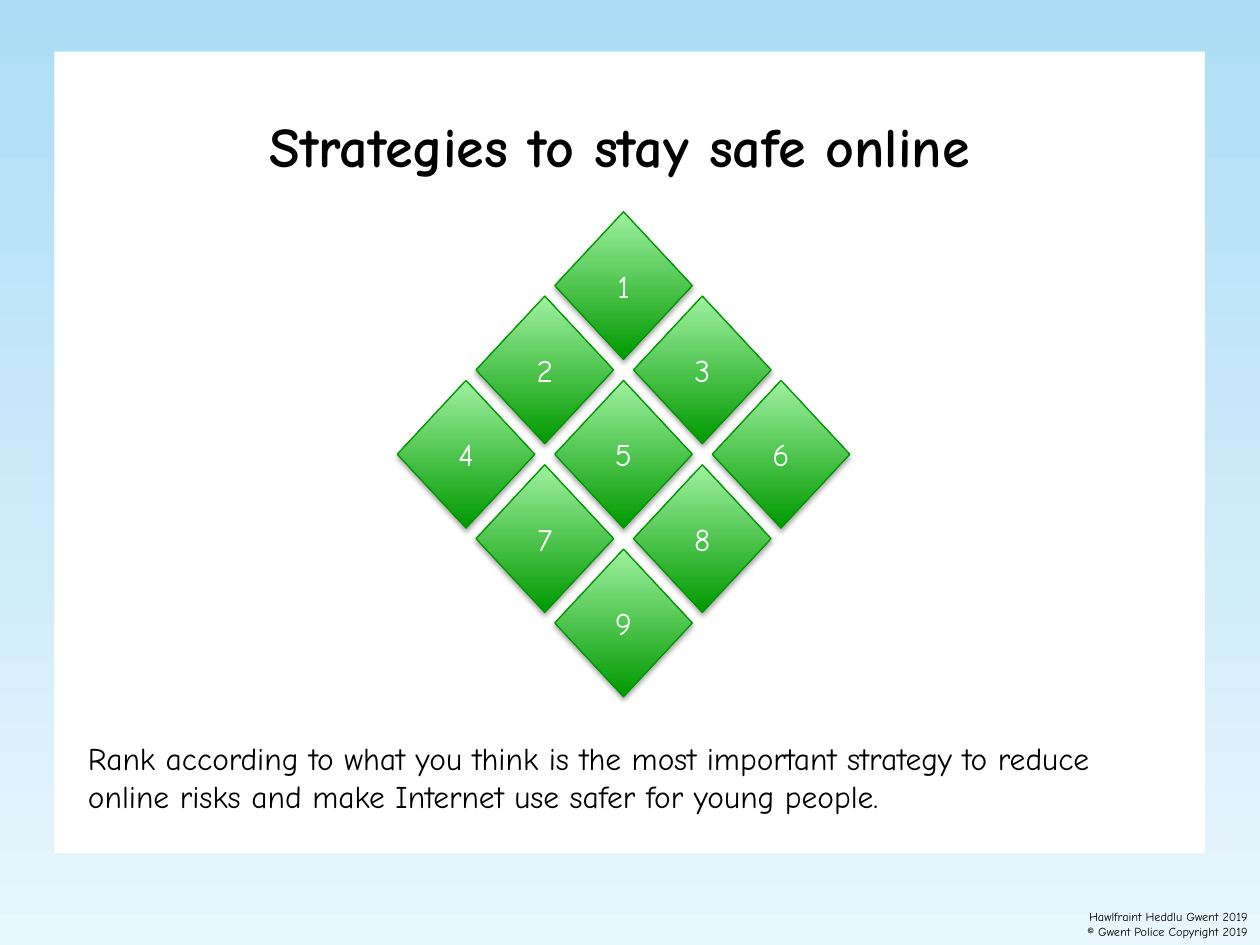
from dataclasses import dataclass

from lxml import etree
from pptx import Presentation
from pptx.dml import color
from pptx.enum import shapes, text
from pptx.oxml import ns
from pptx.util import Pt


@dataclass(frozen=True)
class Theme:
    font: str = "Comic Neue"
    ink: str = "000000"
    paper: str = "FFFFFF"
    sky: tuple = ("ACDDF6", "E8F6FD")
    green: tuple = ("009900", "9FF19F")
    outline: str = "009600"
    title_size: float = 32
    body_size: float = 18
    footer_size: float = 7


THEME = Theme()
DIAMOND_WIDTH, DIAMOND_HEIGHT = 78.6, 84.4
COLUMN_STEP, ROW_STEP = 45, 48.2
MIDDLE_LEFT, FIRST_TOP = 317, 121
RANK_ROWS = (1, 2, 3, 2, 1)


def rgb(value):
    return color.RGBColor.from_string(value)


def points(*lengths):
    return [Pt(length) for length in lengths]


def fill_gradient(fill, colours, angle):
    fill.gradient()
    fill.gradient_angle = angle
    for stop, value in zip(fill.gradient_stops, colours):
        stop.color.rgb = rgb(value)


def write_text(text_frame, wording, size, colour, align, anchor, bold=False):
    text_frame.word_wrap = True
    text_frame.vertical_anchor = anchor
    text_frame.text = wording
    for paragraph in text_frame.paragraphs:
        paragraph.alignment = align
        for run in paragraph.runs:
            run.font.name = THEME.font
            run.font.size = Pt(size)
            run.font.bold = bold
            run.font.color.rgb = rgb(colour)


def add_text(slide, box, wording, size, align, anchor, bold=False):
    shape = slide.shapes.add_textbox(*points(*box))
    write_text(shape.text_frame, wording, size, THEME.ink, align, anchor, bold)


def add_panel(slide, box):
    shape = slide.shapes.add_shape(shapes.MSO_SHAPE.RECTANGLE, *points(*box))
    shape.shadow.inherit = False
    shape.fill.solid()
    shape.fill.fore_color.rgb = rgb(THEME.paper)
    shape.line.fill.background()


def add_soft_shadow(shape):
    shape.shadow.inherit = False
    effects = shape._element.spPr.find(ns.qn("a:effectLst"))
    shadow = etree.SubElement(
        effects, ns.qn("a:outerShdw"), blurRad=str(Pt(3.1)), dist=str(Pt(1.8)),
        dir="5400000", rotWithShape="0")
    shade = etree.SubElement(shadow, ns.qn("a:srgbClr"), val=THEME.ink)
    etree.SubElement(shade, ns.qn("a:alpha"), val="35000")


def add_diamond(slide, left, top, rank):
    shape = slide.shapes.add_shape(
        shapes.MSO_SHAPE.DIAMOND, *points(left, top, DIAMOND_WIDTH, DIAMOND_HEIGHT))
    fill_gradient(shape.fill, THEME.green, 90)
    shape.line.color.rgb = rgb(THEME.outline)
    shape.line.width = Pt(0.75)
    add_soft_shadow(shape)
    write_text(shape.text_frame, str(rank), THEME.body_size, THEME.paper,
               text.PP_ALIGN.CENTER, text.MSO_ANCHOR.MIDDLE)


def add_diamond_ranking(slide):
    rank = 1
    for row, count in enumerate(RANK_ROWS):
        for position in range(count):
            offset = 2 * position - (count - 1)
            add_diamond(slide, MIDDLE_LEFT + offset * COLUMN_STEP,
                        FIRST_TOP + row * ROW_STEP, rank)
            rank += 1


def main():
    presentation = Presentation()
    presentation.slide_width, presentation.slide_height = points(720, 540)
    slide = presentation.slides.add_slide(presentation.slide_layouts[6])
    fill_gradient(slide.background.fill, THEME.sky, 270)
    add_panel(slide, (31, 29.5, 657.5, 458))
    add_text(slide, (571, 509.8, 149, 30.2),
             "Hawlfraint Heddlu Gwent 2019\n© Gwent Police Copyright 2019",
             THEME.footer_size, text.PP_ALIGN.RIGHT, text.MSO_ANCHOR.BOTTOM)
    add_text(slide, (43.2, 39.6, 633.6, 87.1), "Strategies to stay safe online ",
             THEME.title_size, text.PP_ALIGN.CENTER, text.MSO_ANCHOR.MIDDLE, bold=True)
    add_text(slide, (43.2, 419, 633.6, 57.6),
             "Rank according to what you think is the most important strategy "
             "to reduce online risks and make Internet use safer for young people.",
             THEME.body_size, text.PP_ALIGN.LEFT, text.MSO_ANCHOR.TOP)
    add_diamond_ranking(slide)
    presentation.save("out.pptx")


if __name__ == "__main__":
    main()
